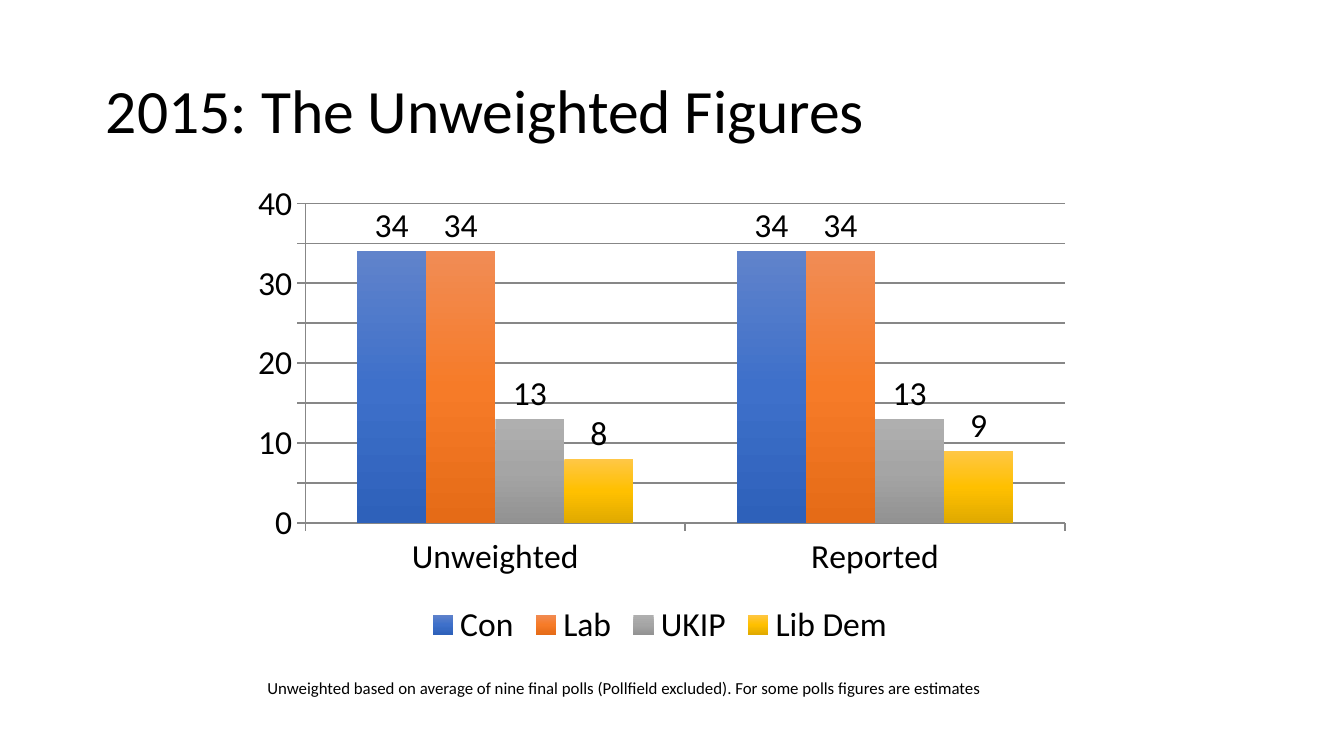
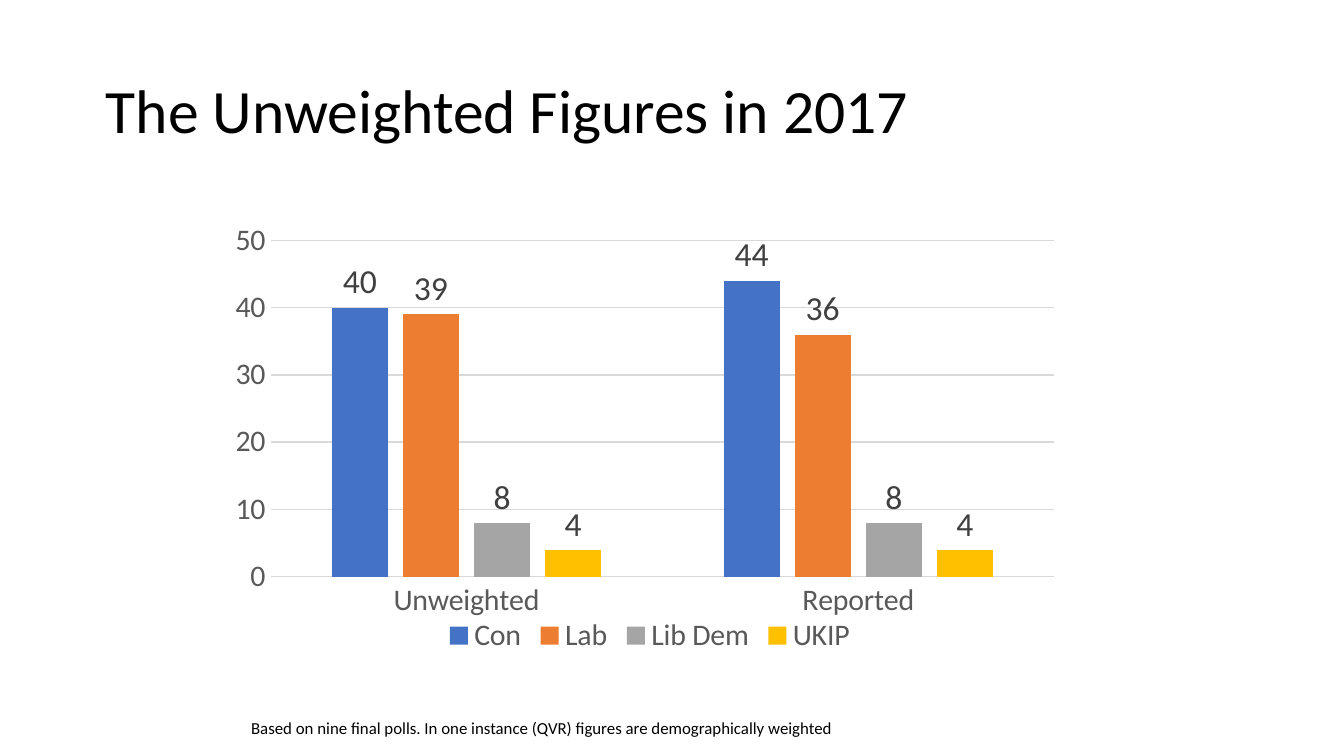
from copy import deepcopy
from dataclasses import dataclass
from typing import Any, Optional

from lxml.etree import SubElement
from pptx import Presentation
from pptx.chart.chart import Chart
from pptx.chart.data import CategoryChartData
from pptx.chart.series import BarSeries
from pptx.dml.color import RGBColor
from pptx.enum.chart import (XL_CHART_TYPE, XL_LABEL_POSITION,
                             XL_LEGEND_POSITION, XL_TICK_MARK)
from pptx.enum.text import MSO_ANCHOR, MSO_AUTO_SIZE
from pptx.oxml.ns import qn
from pptx.slide import Slide
from pptx.util import Inches, Pt

FONT = "Calibri"
BLACK = RGBColor(0x00, 0x00, 0x00)
LABEL_GREY = RGBColor(0x40, 0x40, 0x40)
AXIS_GREY = RGBColor(0x59, 0x59, 0x59)
GRID_GREY = RGBColor(0xD9, 0xD9, 0xD9)
BLUE = RGBColor(0x44, 0x72, 0xC4)
ORANGE = RGBColor(0xED, 0x7D, 0x31)
GREY = RGBColor(0xA5, 0xA5, 0xA5)
GOLD = RGBColor(0xFF, 0xC0, 0x00)
COLORS = (BLUE, ORANGE, GREY, GOLD)
SHADES = (
    (RGBColor(0x60, 0x83, 0xCB), RGBColor(0x3E, 0x70, 0xCA), RGBColor(0x2E, 0x61, 0xBA)),
    (RGBColor(0xF1, 0x8C, 0x55), RGBColor(0xF6, 0x7B, 0x28), RGBColor(0xE5, 0x6B, 0x17)),
    (RGBColor(0xAF, 0xAF, 0xAF), RGBColor(0xA5, 0xA5, 0xA5), RGBColor(0x92, 0x92, 0x92)),
    (RGBColor(0xFF, 0xC7, 0x46), RGBColor(0xFF, 0xC0, 0x00), RGBColor(0xE0, 0xAA, 0x00)),
)
CATEGORIES = ("Unweighted", "Reported")
Box = tuple[float, float, float, float]
TITLE_BOX: Box = (0.69, 0.3, 8.62, 1.09)


@dataclass(frozen=True)
class ChartStyle:
    text_size: int
    text_color: RGBColor
    label_color: RGBColor
    line_color: Optional[RGBColor]
    tick: XL_TICK_MARK
    gradient: bool
    gap: int
    overlap: int
    maximum: int
    unit: int
    plot: Box


@dataclass(frozen=True)
class PollSlide:
    title: str
    chart_box: Box
    results: dict[str, tuple[int, int]]
    style: ChartStyle
    note: str
    note_box: Box


SHADED = ChartStyle(18, BLACK, BLACK, None, XL_TICK_MARK.OUTSIDE, True,
                    150, 0, 40, 5, (0.08, 0.06, 0.9, 0.67))
FLAT = ChartStyle(16, AXIS_GREY, LABEL_GREY, GRID_GREY, XL_TICK_MARK.NONE, False,
                  219, -27, 50, 10, (0.05, 0.14, 0.93, 0.69))

SLIDES = (
    PollSlide(
        "2015: The Unweighted Figures", (1.77, 1.3, 6.28, 3.55),
        {"Con": (34, 34), "Lab": (34, 34), "UKIP": (13, 13), "Lib Dem": (8, 9)}, SHADED,
        "Unweighted based on average of nine final polls (Pollfield excluded). "
        "For some polls figures are estimates", (1.89, 4.99, 5.78, 0.25)),
    PollSlide(
        "The Unweighted Figures in 2017", (1.7, 1.28, 6.27, 3.63),
        {"Con": (40, 44), "Lab": (39, 36), "Lib Dem": (8, 8), "UKIP": (4, 4)}, FLAT,
        "Based on nine final polls. In one instance (QVR) figures are "
        "demographically weighted", (1.77, 5.29, 4.81, 0.25)),
)


def apply(target: Any, values: dict[str, Any]) -> None:
    for name, value in values.items():
        setattr(target, name, value)


def set_font(font: Any, size: int, color: RGBColor) -> None:
    apply(font, {"name": FONT, "size": Pt(size)})
    font.color.rgb = color


def add_text(s: Slide, text: str, box: Box, size: int, frame: dict[str, Any],
             spacing: float = 1.0) -> None:
    tf = s.shapes.add_textbox(*map(Inches, box)).text_frame
    apply(tf, {"word_wrap": True, **frame})
    p = tf.paragraphs[0]
    p.line_spacing = spacing
    r = p.add_run()
    r.text = text
    set_font(r.font, size, BLACK)


def set_plot_layout(chart: Chart, plot: Box) -> None:
    area = chart._chartSpace.chart.plotArea
    layout = area.find(qn("c:layout"))
    if layout is None:
        layout = SubElement(area, qn("c:layout"))
        area.insert(0, layout)
    manual = SubElement(layout, qn("c:manualLayout"))
    fields = {"layoutTarget": "inner", "xMode": "edge", "yMode": "edge",
              **dict(zip("xywh", map(str, plot)))}
    for tag, value in fields.items():
        SubElement(manual, qn(f"c:{tag}")).set("val", value)


def fill_gradient(series: BarSeries, shades: tuple[RGBColor, ...]) -> None:
    fill = series.format.fill
    fill.gradient()
    fill.gradient_angle = 270
    stops = next(series._element.iter(qn("a:gsLst")))
    stops.insert(1, deepcopy(stops[0]))
    for stop, position, shade in zip(fill.gradient_stops, (0, 0.5, 1), shades):
        stop.position = position
        stop.color.rgb = shade


def format_series(series: BarSeries, index: int, style: ChartStyle) -> None:
    if style.gradient:
        fill_gradient(series, SHADES[index])
    else:
        series.format.fill.solid()
        series.format.fill.fore_color.rgb = COLORS[index]
    series.invert_if_negative = False
    labels = series.data_labels
    apply(labels, {"show_value": True, "position": XL_LABEL_POSITION.OUTSIDE_END})
    set_font(labels.font, 18, style.label_color)


def add_poll_chart(s: Slide, poll: PollSlide) -> None:
    style = poll.style
    data = CategoryChartData()
    data.categories = CATEGORIES
    for party, shares in poll.results.items():
        data.add_series(party, shares)
    chart = s.shapes.add_chart(XL_CHART_TYPE.COLUMN_CLUSTERED,
                               *map(Inches, poll.chart_box), data).chart
    apply(chart, {"has_title": False, "has_legend": True})
    set_font(chart.font, style.text_size, style.text_color)
    apply(chart.legend, {"position": XL_LEGEND_POSITION.BOTTOM, "include_in_layout": False})
    set_font(chart.legend.font, style.text_size, style.text_color)
    set_plot_layout(chart, style.plot)

    for axis in (chart.category_axis, chart.value_axis):
        apply(axis, {"major_tick_mark": style.tick, "minor_tick_mark": XL_TICK_MARK.NONE})
        set_font(axis.tick_labels.font, style.text_size, style.text_color)
    apply(chart.value_axis, {"minimum_scale": 0, "maximum_scale": style.maximum,
                             "major_unit": style.unit, "has_major_gridlines": True})
    if style.line_color is not None:
        chart.value_axis.format.line.fill.background()
        for part in (chart.category_axis, chart.value_axis.major_gridlines):
            part.format.line.color.rgb = style.line_color
            part.format.line.width = Pt(0.75)

    plot = chart.plots[0]
    apply(plot, {"gap_width": style.gap, "overlap": style.overlap,
                 "vary_by_categories": False})
    for index, series in enumerate(plot.series):
        format_series(series, index, style)


def main() -> None:
    prs = Presentation()
    width = Inches(10)
    apply(prs, {"slide_width": width, "slide_height": width * 9 // 16})
    for poll in SLIDES:
        s = prs.slides.add_slide(prs.slide_layouts[6])
        add_text(s, poll.title, TITLE_BOX, 33, {"vertical_anchor": MSO_ANCHOR.MIDDLE}, 0.9)
        add_poll_chart(s, poll)
        add_text(s, poll.note, poll.note_box, 9, {"auto_size": MSO_AUTO_SIZE.SHAPE_TO_FIT_TEXT})
    prs.save("out.pptx")


if __name__ == "__main__":
    main()
